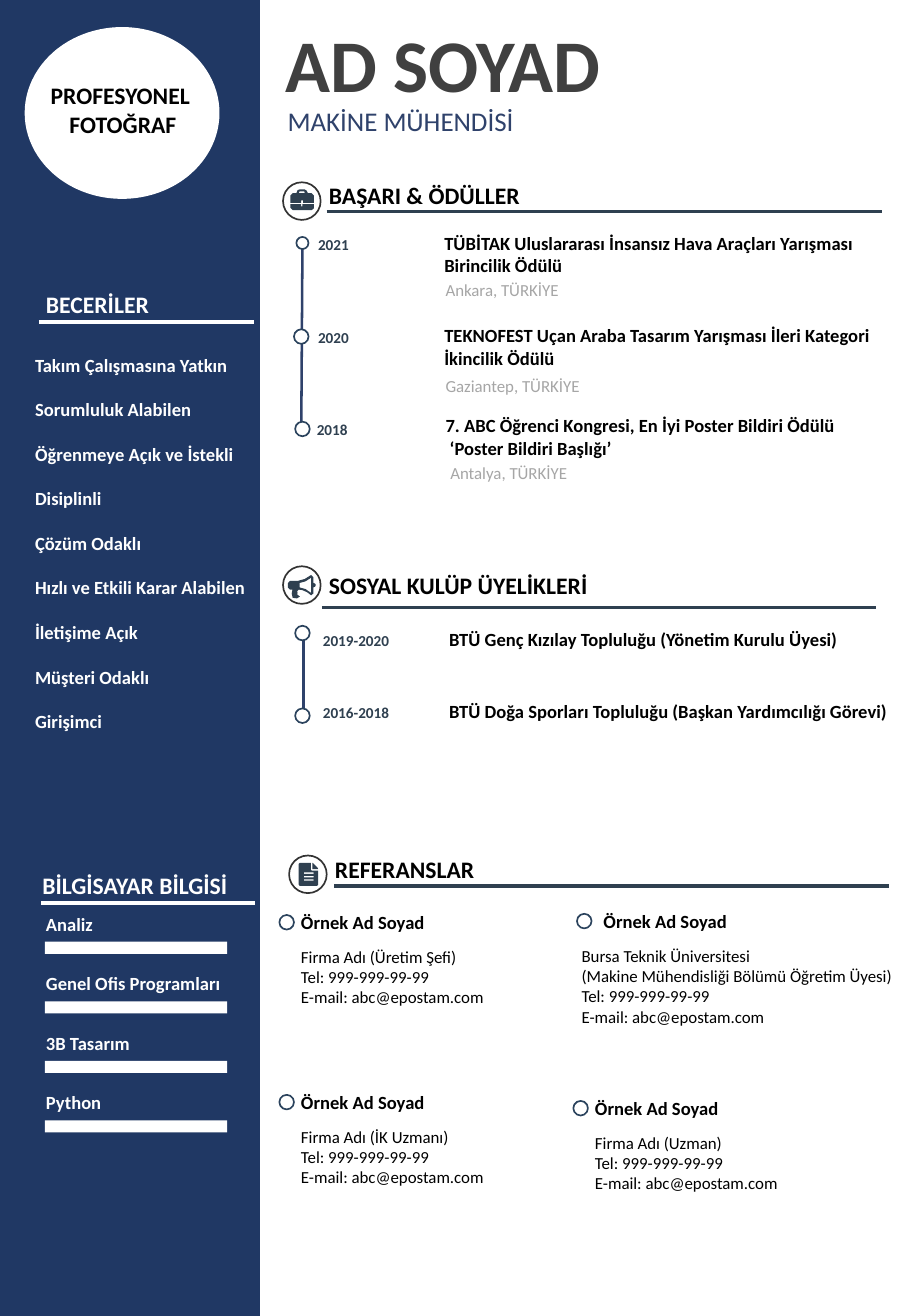
from lxml import etree
from pptx import Presentation
from pptx import util as u
from pptx.dml.color import RGBColor
from pptx.enum import shapes, text
from pptx.oxml import ns

COLORS = {
    "navy": "203864", "white": "FFFFFF", "black": "000000", "name": "404040",
    "accent": "2F426B", "slate": "2F4050", "ring": "333333", "dot": "2B435D",
    "place": "A6A6A6",
}

BRIEFCASE = [
    [(2390, 1680), (2480, 1680), (2480, 1700), (2490, 1700), (2490, 1680),
     (2585, 1680), (2585, 1715), (2565, 1730), (2410, 1730), (2390, 1710)],
    [(2390, 1670), (2390, 1610), (2410, 1590), (2440, 1590), (2450, 1565),
     (2465, 1560), (2510, 1560), (2525, 1570), (2535, 1590), (2565, 1590),
     (2585, 1610), (2585, 1670), (2495, 1670), (2495, 1650), (2480, 1650),
     (2480, 1670)],
    [(2460, 1590), (2465, 1575), (2505, 1575), (2510, 1590)],
]
MEGAPHONE = [
    [(2600, 4815), (2595, 4828), (2580, 4835), (2580, 4885), (2562, 4900),
     (2530, 4875), (2490, 4857), (2460, 4853), (2447, 4865), (2450, 4880),
     (2447, 4893), (2470, 4910), (2445, 4925), (2410, 4920), (2402, 4885),
     (2408, 4853), (2388, 4853), (2370, 4835), (2370, 4800), (2388, 4782),
     (2450, 4782), (2510, 4765), (2562, 4732), (2580, 4750), (2580, 4798),
     (2595, 4803)],
    [(2562, 4755), (2515, 4785), (2468, 4798), (2468, 4835), (2515, 4848),
     (2562, 4880)],
]
DOCUMENT = [
    [(2620, 7165), (2620, 7280), (2612, 7290), (2468, 7290), (2460, 7280),
     (2460, 7110), (2468, 7100), (2560, 7100), (2560, 7157), (2568, 7165)],
    [(2573, 7100), (2580, 7105), (2615, 7140), (2620, 7152), (2573, 7152)],
] + [
    [(2503, top), (2583, top), (2583, top + 12), (2503, top + 12)]
    for top in (7180, 7208, 7236)
]

SKILLS = [
    "Takım Çalışmasına Yatkın", "Sorumluluk Alabilen", "Öğrenmeye Açık ve İstekli",
    "Disiplinli", "Çözüm Odaklı", "Hızlı ve Etkili Karar Alabilen",
    "İletişime Açık", "Müşteri Odaklı", "Girişimci",
]
SOFTWARE = ["Analiz", "Genel Ofis Programları", "3B Tasarım", "Python"]
AWARDS = [
    (1.89, 2.52, 3.56, 1.86, ["TÜBİTAK Uluslararası İnsansız Hava Araçları Yarışması",
                              "Birincilik Ödülü"], 3.57, 2.25, "Ankara, TÜRKİYE"),
    (2.65, 2.52, 3.56, 2.62, ["TEKNOFEST Uçan Araba Tasarım Yarışması İleri Kategori",
                              "İkincilik Ödülü"], 3.57, 3.04, "Gaziantep, TÜRKİYE"),
    (3.41, 2.51, 3.57, 3.36, ["7. ABC Öğrenci Kongresi, En İyi Poster Bildiri Ödülü",
                              " ‘Poster Bildiri Başlığı’"], 3.61, 3.76, "Antalya, TÜRKİYE"),
]
AWARD_YEARS = ["2021", "2020", "2018"]
AWARD_DOTS = [(2.44, 1.95, 0.1), (2.42, 2.71, 0.12), (2.43, 3.47, 0.12)]
CLUBS = [
    (5.15, 5.15, "2019-2020", "BTÜ Genç Kızılay Topluluğu (Yönetim Kurulu Üyesi)"),
    (5.74, 5.83, "2016-2018", "BTÜ Doğa Sporları Topluluğu (Başkan Yardımcılığı Görevi)"),
]
REFERENCES = [
    (2.38, 7.45, 2.3, 2.38, ["Firma Adı (Üretim Şefi)"]),
    (4.87, 7.44, 4.75, 4.69, ["Bursa Teknik Üniversitesi",
                              "(Makine Mühendisliği Bölümü Öğretim Üyesi)"]),
    (2.38, 8.93, 2.3, 2.38, ["Firma Adı (İK Uzmanı)"]),
    (4.8, 8.98, 4.72, 4.8, ["Firma Adı (Uzman)"]),
]
CONTACT = ["Tel: 999-999-99-99", "E-mail: abc@epostam.com"]


def color(name):
    return RGBColor.from_string(COLORS[name])


def add_text(slide, left, top, width, height, lines, size, tone="black",
             bold=True, wrap=True, align=text.PP_ALIGN.LEFT, gap=0):
    box = slide.shapes.add_textbox(*map(u.Inches, (left, top, width, height)))
    frame = box.text_frame
    frame.word_wrap = wrap
    frame.auto_size = text.MSO_AUTO_SIZE.SHAPE_TO_FIT_TEXT
    for index, line in enumerate(lines):
        paragraph = frame.add_paragraph() if index else frame.paragraphs[0]
        paragraph.text = line
        paragraph.alignment = align
        if index and gap:
            paragraph.space_before = u.Pt(gap)
        paragraph.font.name = "Calibri"
        paragraph.font.size = u.Pt(size)
        paragraph.font.bold = bold
        paragraph.font.color.rgb = color(tone)


def paint(shape, fill, line=None):
    shape.shadow.inherit = False
    shape.fill.solid()
    shape.fill.fore_color.rgb = color(fill)
    if line:
        shape.line.color.rgb = color(line)
        shape.line.width = u.Pt(1)
    else:
        shape.line.fill.background()


def add_shape(slide, kind, left, top, width, height, fill="white", line=None):
    shape = slide.shapes.add_shape(kind, *map(u.Inches, (left, top, width, height)))
    paint(shape, fill, line)


def add_dot(slide, left, top, size=0.12, line="dot"):
    add_shape(slide, shapes.MSO_SHAPE.OVAL, left, top, size, size, line=line)


def add_line(slide, x1, y1, x2, y2, tone, weight=2.25):
    line = slide.shapes.add_connector(
        shapes.MSO_CONNECTOR.STRAIGHT, *map(u.Inches, (x1, y1, x2, y2)))
    line.line.color.rgb = color(tone)
    line.line.width = u.Pt(weight)
    etree.SubElement(line._element.spPr, ns.qn("a:effectLst"))


def add_icon(slide, outlines):
    builder = slide.shapes.build_freeform(*outlines[0][0], scale=u.Inches(1) / 1000)
    for index, outline in enumerate(outlines):
        if index:
            builder.move_to(*outline[0])
        builder.add_line_segments(outline[1:], close=True)
    paint(builder.convert_to_shape(), "slate")


def add_section(slide, title, left, top, width, ring, rule, icon):
    add_dot(slide, *ring, 0.31, "ring")
    add_icon(slide, icon)
    start, end, level = rule
    add_line(slide, start, level, end, level, "slate")
    add_text(slide, left, top, width, 0.34, [title], 14, wrap=False)


def add_sidebar(slide):
    add_shape(slide, shapes.MSO_SHAPE.RECTANGLE, 0, 0, 2.14, 10.83, "navy")
    add_shape(slide, shapes.MSO_SHAPE.OVAL, 0.21, 0.23, 1.59, 1.4, line="white")
    add_text(slide, 0.25, 0.62, 1.48, 0.57, ["PROFESYONEL", " FOTOĞRAF"], 14,
             align=text.PP_ALIGN.CENTER)
    add_line(slide, 0.32, 2.65, 2.09, 2.65, "white")
    add_text(slide, 0.28, 2.34, 1.06, 0.34, ["BECERİLER"], 14, "white", wrap=False)
    add_text(slide, 0.19, 2.86, 2.14, 3.62, SKILLS, 11, "white", gap=13.2)
    add_line(slide, 0.34, 7.43, 2.1, 7.43, "white")
    add_text(slide, 0.25, 7.12, 1.74, 0.34, ["BİLGİSAYAR BİLGİSİ"], 14, "white", wrap=False)
    for index, program in enumerate(SOFTWARE):
        top = 7.46 + index * 0.49
        add_text(slide, 0.28, top, 1.85, 0.29, [program], 11, "white")
        add_shape(slide, shapes.MSO_SHAPE.RECTANGLE, 0.37, top + 0.29, 1.5, 0.1)


def add_awards(slide):
    add_section(slide, "BAŞARI & ÖDÜLLER", 2.61, 1.44, 1.79, (2.33, 1.5),
                (2.69, 7.26, 1.74), BRIEFCASE)
    add_line(slide, 2.49, 2.05, 2.48, 3.59, "accent", 1.5)
    for year, dot, award in zip(AWARD_YEARS, AWARD_DOTS, AWARDS):
        year_top, year_left, left, top, title, place_left, place_top, place = award
        add_dot(slide, *dot)
        add_text(slide, year_left, year_top, 1.31, 0.25, [year], 9, "slate")
        add_text(slide, left, top, 3.83, 0.47, title, 11)
        add_text(slide, place_left, place_top, 1.67, 0.27, [place], 10, "place", False)


def add_clubs(slide):
    add_section(slide, "SOSYAL KULÜP ÜYELİKLERİ", 2.61, 4.65, 2.34, (2.33, 4.66),
                (2.65, 7.21, 5), MEGAPHONE)
    add_line(slide, 2.5, 5.17, 2.5, 5.9, "accent", 1.5)
    for top, dot_top, years, club in CLUBS:
        add_dot(slide, 2.43, dot_top)
        add_text(slide, 2.56, top, 1.31, 0.25, [years], 9, "slate")
        add_text(slide, 3.6, top - 0.03, 3.93, 0.29, [club], 11)


def add_references(slide):
    add_section(slide, "REFERANSLAR", 2.66, 6.99, 1.4, (2.38, 7.04),
                (2.75, 7.32, 7.29), DOCUMENT)
    for left, top, dot_left, details_left, details in REFERENCES:
        lines = details + CONTACT
        add_dot(slide, dot_left, top + 0.08)
        add_text(slide, left, top, 1.3, 0.29, ["Örnek Ad Soyad"], 11)
        add_text(slide, details_left, top + 0.29, 2.87, 0.1 + 0.17 * len(lines),
                 lines, 10, bold=False)


def main():
    """Build the one-page résumé slide and save it."""
    presentation = Presentation()
    presentation.slide_width = u.Inches(7.5)
    presentation.slide_height = u.Inches(10.83)
    slide = presentation.slides.add_slide(presentation.slide_layouts[6])
    add_sidebar(slide)
    add_text(slide, 2.25, 0.1, 5.25, 0.84, ["AD SOYAD"], 44, "name")
    add_text(slide, 2.27, 0.81, 5.23, 0.37, ["MAKİNE MÜHENDİSİ"], 16, "accent", False)
    add_awards(slide)
    add_clubs(slide)
    add_references(slide)
    presentation.save("out.pptx")


if __name__ == "__main__":
    main()
